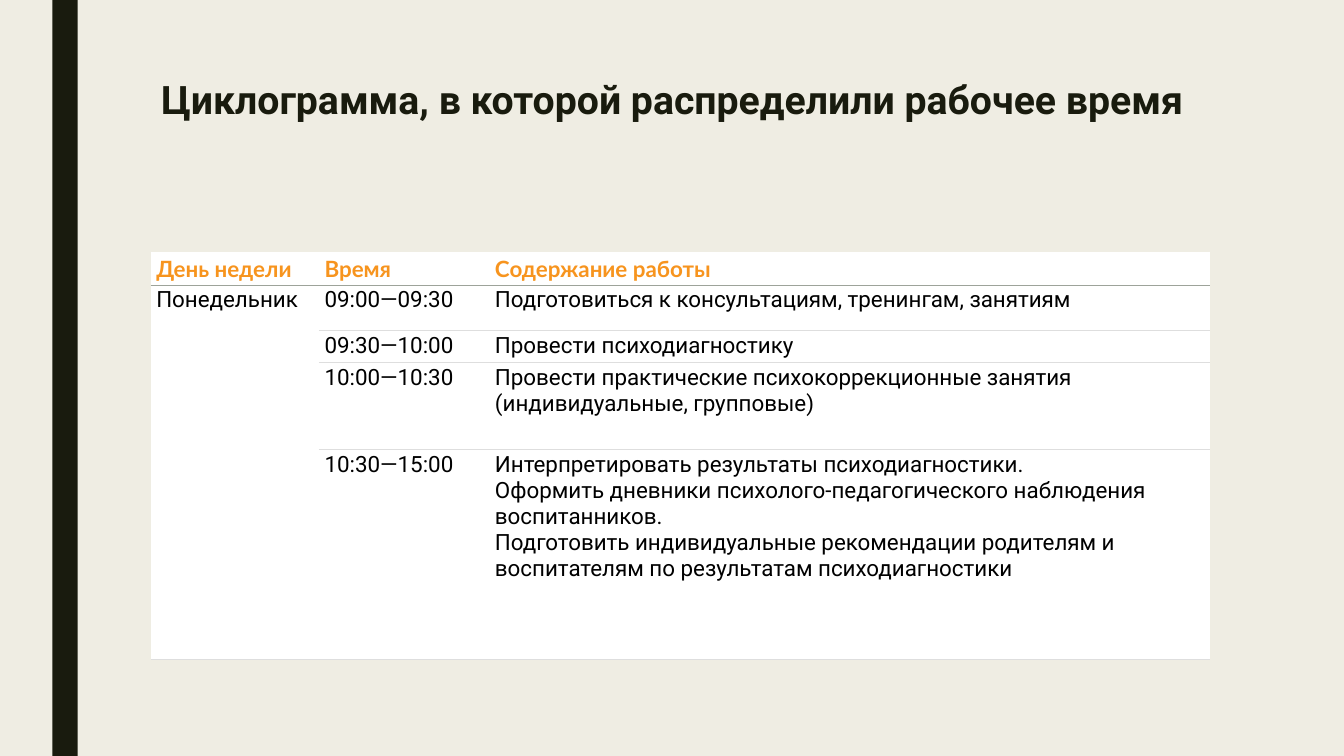
from lxml import etree
from pptx import Presentation
from pptx.dml import color
from pptx.enum import shapes, text
from pptx.oxml import ns
from pptx.util import Inches, Pt

COLUMN_WIDTHS = [1.67, 1.69, 7.14]
ROW_HEIGHTS = [0.33, 0.45, 0.32, 0.86, 2.08]
HEADERS = ["День недели", "Время", "Содержание работы"]
DAY = "Понедельник"
SCHEDULE = [
    ("09:00—09:30", "Подготовиться к консультациям, тренингам, занятиям"),
    ("09:30—10:00", "Провести психодиагностику"),
    ("10:00—10:30", "Провести практические психокоррекционные занятия (индивидуальные, групповые)"),
    ("10:30—15:00", "Интерпретировать результаты психодиагностики.\n"
                    "Оформить дневники психолого-педагогического наблюдения воспитанников.\n"
                    "Подготовить индивидуальные рекомендации родителям "
                    "и воспитателям по результатам психодиагностики"),
]
WHITE, BLACK, DARK, ORANGE = "FFFFFF", "000000", "191B0E", "F7941E"
HEADER_LINE, ROW_LINE = "9DA39A", "DEDEDE"


def paint(fill, value):
    fill.solid()
    fill.fore_color.rgb = color.RGBColor.from_string(value)


def write(paragraph, content, font_name, size, value, bold=False):
    for index, line in enumerate(content.split("\n")):
        if index:
            paragraph.add_line_break()
        run = paragraph.add_run()
        run.text = line
        run.font.name = font_name
        run.font.size = Pt(size)
        run.font.bold = bold
        paint(run.font.fill, value)


def add_bar(slide):
    shape = slide.shapes.add_shape(
        shapes.MSO_SHAPE.RECTANGLE, Inches(0.52), 0, Inches(0.25), Inches(7.5))
    shape.shadow.inherit = False
    paint(shape.fill, DARK)
    shape.line.fill.background()


def add_title(slide, content):
    shape = slide.shapes.add_textbox(Inches(1.5), Inches(0.75), Inches(10.5), Inches(1.09))
    frame = shape.text_frame
    frame.word_wrap = True
    frame.vertical_anchor = text.MSO_ANCHOR.TOP
    paragraph = frame.paragraphs[0]
    paragraph.line_spacing = 0.89
    write(paragraph, content, "Roboto", 28, DARK, True)


def set_border(cell, position, side, value):
    line = etree.Element(ns.qn(f"a:{side}"), w=str(Pt(0.75)))
    solid = etree.SubElement(line, ns.qn("a:solidFill"))
    etree.SubElement(solid, ns.qn("a:srgbClr"), val=value)
    cell._tc.get_or_add_tcPr().insert(position, line)


def fill_cell(cell, content, header=False):
    cell.margin_left = Inches(0.05)
    cell.margin_right = Inches(0.14 if header else 0.05)
    cell.margin_top = cell.margin_bottom = Inches(0.03 if header else 0.02)
    paragraph = cell.text_frame.paragraphs[0]
    if header:
        write(paragraph, content, "Lato", 16, ORANGE, True)
    else:
        write(paragraph, content, "Roboto", 16, BLACK)


def style_cell(cell, top, bottom):
    paint(cell.fill, WHITE)
    set_border(cell, 0, "lnT", top)
    set_border(cell, 1, "lnB", bottom)


def add_schedule(slide):
    table = slide.shapes.add_table(
        len(ROW_HEIGHTS), len(COLUMN_WIDTHS), Inches(1.5), Inches(2.5),
        Inches(sum(COLUMN_WIDTHS)), Inches(sum(ROW_HEIGHTS))).table
    table.first_row = table.horz_banding = False
    for column, width in zip(table.columns, COLUMN_WIDTHS):
        column.width = Inches(width)
    for row, height in zip(table.rows, ROW_HEIGHTS):
        row.height = Inches(height)

    for index, header in enumerate(HEADERS):
        cell = table.cell(0, index)
        fill_cell(cell, header, header=True)
        style_cell(cell, WHITE, HEADER_LINE)

    last_row = len(SCHEDULE)
    day_cell = table.cell(1, 0)
    day_cell.merge(table.cell(last_row, 0))
    fill_cell(day_cell, DAY)
    for row_index, entry in enumerate(SCHEDULE, 1):
        top = HEADER_LINE if row_index == 1 else ROW_LINE
        day_top = HEADER_LINE if row_index == 1 else WHITE
        day_bottom = ROW_LINE if row_index in (1, last_row) else WHITE
        style_cell(table.cell(row_index, 0), day_top, day_bottom)
        for column_index, content in enumerate(entry, 1):
            cell = table.cell(row_index, column_index)
            fill_cell(cell, content)
            style_cell(cell, top, ROW_LINE)


def main():
    presentation = Presentation()
    presentation.slide_width = Inches(13.33)
    presentation.slide_height = Inches(7.5)
    slide = presentation.slides.add_slide(presentation.slide_layouts[6])
    paint(slide.background.fill, "EFEDE3")
    add_bar(slide)
    add_title(slide, "Циклограмма, в которой распределили рабочее время")
    add_schedule(slide)
    presentation.save("out.pptx")


if __name__ == "__main__":
    main()
